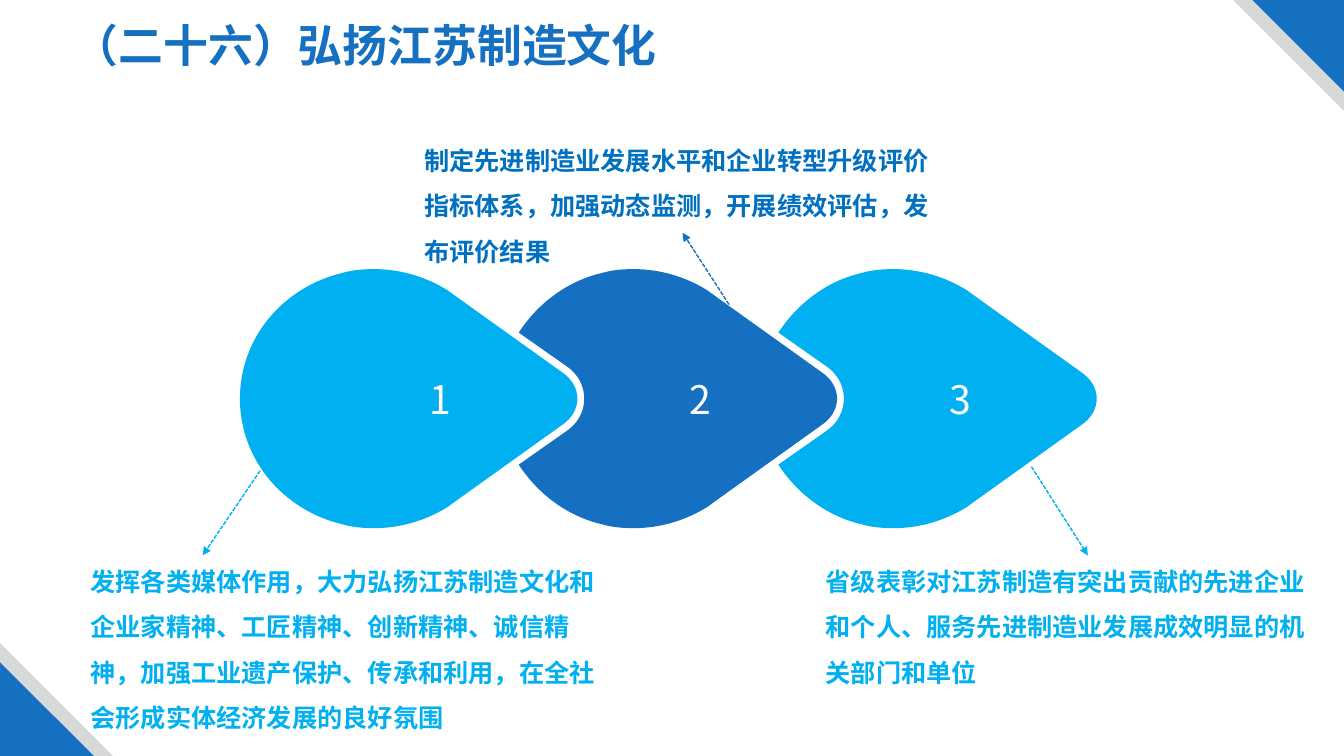
"""Builds the slide on promoting Jiangsu manufacturing culture."""
from lxml.etree import SubElement
from pptx import Presentation
from pptx.dml.color import RGBColor
from pptx.enum.dml import MSO_LINE
from pptx.enum.shapes import MSO_CONNECTOR, MSO_SHAPE
from pptx.enum.text import MSO_ANCHOR, MSO_AUTO_SIZE, PP_ALIGN
from pptx.oxml.ns import qn
from pptx.util import Inches, Pt

FONT = "Noto Sans CJK SC"
COLORS = {"blue": "1570C1", "sky": "00B0F0", "text": "0070C0", "gray": "D7D8D8", "white": "FFFFFF"}
WIDTH, HEIGHT = 13.33, 7.5
TITLE = "（二十六）弘扬江苏制造文化"
NOTES = [
    ("发挥各类媒体作用，大力弘扬江苏制造文化和企业家精神、工匠精神、创新精神、诚信精神，"
     "加强工业遗产保护、传承和利用，在全社会形成实体经济发展的良好氛围",
     (0.8, 5.42, 5.26, 1.9), "sky"),
    ("制定先进制造业发展水平和企业转型升级评价指标体系，加强动态监测，开展绩效评估，发布评价结果",
     (4.11, 1.24, 5.28, 1.45), "text"),
    ("省级表彰对江苏制造有突出贡献的先进企业和个人、服务先进制造业发展成效明显的机关部门和单位",
     (8.09, 5.42, 5.09, 1.45), "sky"),
]
ARROWS = [
    ((7.23, 3.02), (6.77, 2.31), "blue"),
    ((2.58, 4.67), (2.01, 5.51), "sky"),
    ((10.23, 4.63), (10.79, 5.51), "sky"),
]
CORNERS = [("gray", 1.1, 1.12), ("blue", 0.91, 0.93)]
DROP_COLORS = ["sky", "blue", "sky"]
DROP_PITCH = 5.15 / 2
NUMBER_PITCH = 2.58
AXIS = (2.67 + 5.24) / 2
TIP_START = (5.57, 3.69)
TIP_CONTROL = (5.78, 3.83)
NOSE = [
    (4.55, 2.96), (4.55, 2.96), (4.55, 2.96),
    (4.51, 2.93), (4.48, 2.91), (4.44, 2.88),
    (4.23, 2.75), (3.98, 2.67), (3.71, 2.67),
    (3.6, 2.67), (3.49, 2.68), (3.39, 2.71),
]
ROUND_BACK = [(2.81, 2.85), (2.38, 3.35), (2.38, AXIS)]
NOTCHED_BACK = [
    (3.05, 2.79), (2.76, 3.01), (2.57, 3.3),
    (3.04, 3.63), (3.04, 3.63), (3.04, 3.63),
    (3.16, 3.71), (3.22, 3.83), (3.22, AXIS),
]


def color(name):
    return RGBColor.from_string(COLORS[name])


def paint(shape, name):
    shape.shadow.inherit = False
    shape.fill.solid()
    shape.fill.fore_color.rgb = color(name)
    shape.line.fill.background()


def add_text(slide, text, box, size, name, bold=True, centered=False, spacing=None):
    shape = slide.shapes.add_textbox(*map(Inches, box))
    frame = shape.text_frame
    frame.word_wrap = True
    paragraph = frame.paragraphs[0]
    paragraph.alignment = PP_ALIGN.CENTER if centered else PP_ALIGN.LEFT
    paragraph._p.get_or_add_pPr().set("hangingPunct", "0")
    if spacing:
        paragraph.line_spacing = spacing
    run = paragraph.add_run()
    run.text = text
    font = run.font
    font.size, font.bold, font.name = Pt(size), bold, FONT
    font.color.rgb = color(name)
    SubElement(run._r.get_or_add_rPr(), qn("a:ea"), typeface=FONT)
    return frame


def add_corner(slide, name, size, left, top, rotation):
    shape = slide.shapes.add_shape(MSO_SHAPE.RIGHT_TRIANGLE, *map(Inches, (left, top, size, size)))
    shape.rotation = rotation
    paint(shape, name)


def mirror(points):
    return [(x, 2 * AXIS - y) for x, y in reversed(points)]


def bend_lines(shape):
    lines = list(shape._element.iter(qn("a:lnTo")))
    for first, second, third in zip(lines[::3], lines[1::3], lines[2::3]):
        first.tag = qn("a:cubicBezTo")
        for line in (second, third):
            first.append(line[0])
            line.getparent().remove(line)


def add_drop(slide, index, name):
    upper = [TIP_START] + NOSE + (NOTCHED_BACK if index else ROUND_BACK)
    tip = mirror([TIP_CONTROL]) + [TIP_CONTROL, TIP_START]
    points = upper + mirror(upper[:-1]) + tip
    outline = [(Inches(x + index * DROP_PITCH), Inches(y)) for x, y in points]
    builder = slide.shapes.build_freeform(*outline[0], scale=1.0)
    builder.add_line_segments(outline[1:], close=True)
    shape = builder.convert_to_shape()
    bend_lines(shape)
    paint(shape, name)


def add_number(slide, index):
    box = (2.77 + index * NUMBER_PITCH, 3.67, 3.19, 0.57)
    frame = add_text(slide, str(index + 1), box, 28, "white", bold=False, centered=True)
    frame.vertical_anchor = MSO_ANCHOR.MIDDLE
    frame.margin_left = frame.margin_right = frame.margin_top = frame.margin_bottom = 0


def add_arrow(slide, start, end, name):
    connector = slide.shapes.add_connector(MSO_CONNECTOR.STRAIGHT, *map(Inches, start + end))
    connector.line.color.rgb = color(name)
    connector.line.width = Pt(1)
    connector.line.dash_style = MSO_LINE.SQUARE_DOT
    SubElement(connector.line._get_or_add_ln(), qn("a:tailEnd"), type="triangle")
    SubElement(connector._element.spPr, qn("a:effectLst"))


def main():
    presentation = Presentation()
    presentation.slide_width, presentation.slide_height = Inches(WIDTH), Inches(HEIGHT)
    slide = presentation.slides.add_slide(presentation.slide_layouts[6])
    for name, upper_size, lower_size in CORNERS:
        add_corner(slide, name, upper_size, WIDTH - upper_size, 0, 180)
        add_corner(slide, name, lower_size, 0, HEIGHT - lower_size, 0)
    title = add_text(slide, TITLE, (0.02, 0.13, 7.21, 0.67), 32, "blue", centered=True)
    title.auto_size = MSO_AUTO_SIZE.SHAPE_TO_FIT_TEXT
    for index, name in enumerate(DROP_COLORS):
        add_drop(slide, index, name)
    for index in range(len(DROP_COLORS)):
        add_number(slide, index)
    for text, box, name in NOTES:
        note = add_text(slide, text, box, 18, name, spacing=1.5)
        note.auto_size = MSO_AUTO_SIZE.SHAPE_TO_FIT_TEXT
    for start, end, name in ARROWS:
        add_arrow(slide, start, end, name)
    presentation.save("out.pptx")


if __name__ == "__main__":
    main()
